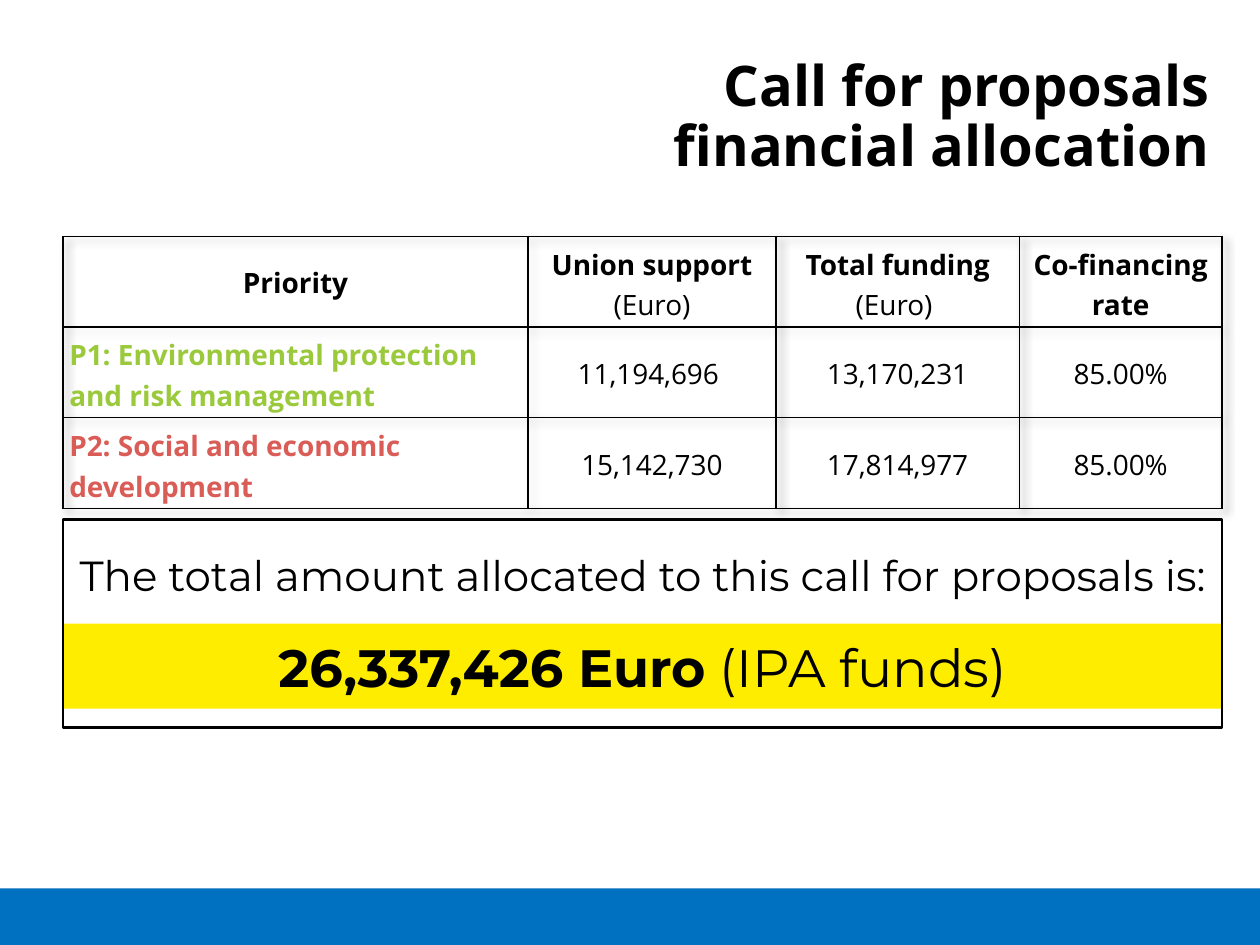
from dataclasses import dataclass

from lxml import etree
from pptx import Presentation
from pptx.dml.color import RGBColor
from pptx.enum.shapes import MSO_SHAPE
from pptx.enum.text import MSO_ANCHOR, PP_ALIGN
from pptx.oxml import parse_xml
from pptx.oxml.ns import nsdecls, qn
from pptx.util import Inches, Pt

RECTANGLE = MSO_SHAPE.RECTANGLE
MIDDLE = MSO_ANCHOR.MIDDLE
LEFT, CENTER, RIGHT = PP_ALIGN.LEFT, PP_ALIGN.CENTER, PP_ALIGN.RIGHT
WIDTH, HEIGHT = Inches(10), Inches(7.5)


@dataclass(frozen=True)
class Theme:
    ink: str = "000000"
    footer: str = "0070C0"
    highlight: str = "FFED00"
    environment: str = "9ACA3C"
    social: str = "DA5C57"
    main_font: str = "Open Sans"
    total_font: str = "Montserrat"
    title_size: int = 32
    total_size: int = 30
    lead_size: int = 24
    table_size: int = 16


THEME = Theme()
COLUMNS = (3.69, 1.97, 1.93, 1.61)
ROW_HEIGHT = 0.72
HEADER = (
    [("Priority", True)],
    [("Union support", True), ("(Euro)", False)],
    [("Total funding", True), ("(Euro)\u00a0", False)],
    [("Co-financing rate", True)],
)
PRIORITIES = (
    (THEME.environment, "P1: Environmental protection and risk management",
     ("11,194,696 ", "13,170,231", "85.00%")),
    (THEME.social, "P2: Social and economic development",
     ("15,142,730", "17,814,977", "85.00%")),
)


def set_values(target, values):
    for name, value in values.items():
        setattr(target, name, value)


def area(left, top, width, height):
    return (round(left * WIDTH), round(top * HEIGHT),
            round(width * WIDTH), round(height * HEIGHT))


def add_span(para, text, size, font, bold=False, color=THEME.ink):
    span = para.add_run()
    span.text = text
    set_values(span.font, {"name": font, "size": Pt(size), "bold": bold})
    span.font.color.rgb = RGBColor.from_string(color)


def add_rectangle(page, place, fill=None, line=None):
    box = page.shapes.add_shape(RECTANGLE, *area(*place))
    box.shadow.inherit = False
    if fill:
        box.fill.solid()
        box.fill.fore_color.rgb = RGBColor.from_string(fill)
    else:
        box.fill.background()
    if line:
        box.line.color.rgb = RGBColor.from_string(line)
        box.line.width = Pt(1.5)
    else:
        box.line.fill.background()
    return box


def add_title(page, place, text):
    box = page.shapes.add_textbox(*area(*place))
    set_values(box.text_frame, {"word_wrap": True, "vertical_anchor": MIDDLE})
    para = box.text_frame.paragraphs[0]
    set_values(para, {"alignment": RIGHT, "line_spacing": 0.9})
    add_span(para, text, THEME.title_size, THEME.main_font, True)


def add_total(page, place):
    frame = add_rectangle(page, place, line=THEME.ink).text_frame
    set_values(frame, {"word_wrap": True, "vertical_anchor": MIDDLE})
    lead, total = frame.paragraphs[0], frame.add_paragraph()
    lead.alignment = CENTER
    set_values(total, {"alignment": CENTER, "space_before": Pt(20)})
    add_span(lead, "The total amount allocated to this call for proposals is:",
             THEME.lead_size, THEME.total_font)
    add_span(total, "26,337,426 Euro", THEME.total_size, THEME.total_font, True)
    add_span(total, " (IPA funds)", THEME.total_size, THEME.total_font)


def add_borders(cell):
    properties = cell._tc.get_or_add_tcPr()
    for index, side in enumerate(("lnL", "lnR", "lnT", "lnB")):
        line = etree.Element(qn(f"a:{side}"), w=str(Pt(1)))
        fill = etree.SubElement(line, qn("a:solidFill"))
        etree.SubElement(fill, qn("a:srgbClr"), val=THEME.ink)
        properties.insert(index, line)


def fill_cell(cell, lines, alignment=CENTER, color=THEME.ink):
    margin = Inches(0.05)
    set_values(cell, {"vertical_anchor": MIDDLE, "margin_left": margin, "margin_right": margin,
                      "margin_top": margin, "margin_bottom": margin})
    cell.fill.background()
    add_borders(cell)
    frame = cell.text_frame
    for index, (text, bold) in enumerate(lines):
        para = frame.add_paragraph() if index else frame.paragraphs[0]
        set_values(para, {"alignment": alignment, "line_spacing": 1.07})
        add_span(para, text, THEME.table_size, THEME.main_font, bold, color)


def add_table_shadow(table):
    table._tbl.tblPr.insert(0, parse_xml(
        f'<a:effectLst {nsdecls("a")}>'
        '<a:outerShdw blurRad="50800" dist="38100" dir="2700000" algn="tl">'
        f'<a:srgbClr val="{THEME.ink}"><a:alpha val="40000"/></a:srgbClr>'
        '</a:outerShdw></a:effectLst>'))


def add_allocation_table(page, left, top):
    row_count = len(PRIORITIES) + 1
    table = page.shapes.add_table(
        row_count, len(COLUMNS), round(left * WIDTH), round(top * HEIGHT),
        Inches(sum(COLUMNS)), Inches(ROW_HEIGHT * row_count)).table
    set_values(table, {"first_row": False, "horz_banding": False})
    add_table_shadow(table)
    for column, width in zip(table.columns, COLUMNS):
        column.width = Inches(width)
    for row in table.rows:
        row.height = Inches(ROW_HEIGHT)
    for column, lines in enumerate(HEADER):
        fill_cell(table.cell(0, column), lines)
    for row, (color, name, amounts) in enumerate(PRIORITIES, start=1):
        fill_cell(table.cell(row, 0), [(name, True)], LEFT, color)
        for column, amount in enumerate(amounts, start=1):
            fill_cell(table.cell(row, column), [(amount, False)])


def main():
    deck = Presentation()
    set_values(deck, {"slide_width": WIDTH, "slide_height": HEIGHT})
    page = deck.slides.add_slide(deck.slide_layouts[6])
    add_rectangle(page, (0, 0.94, 1, 0.06), fill=THEME.footer)
    add_rectangle(page, (0.05, 0.66, 0.92, 0.09), fill=THEME.highlight)
    add_total(page, (0.05, 0.55, 0.92, 0.22))
    add_title(page, (0.52, 0.05, 0.45, 0.15), "Call for proposals financial allocation")
    add_allocation_table(page, 0.05, 0.25)
    deck.save("out.pptx")


if __name__ == "__main__":
    main()
